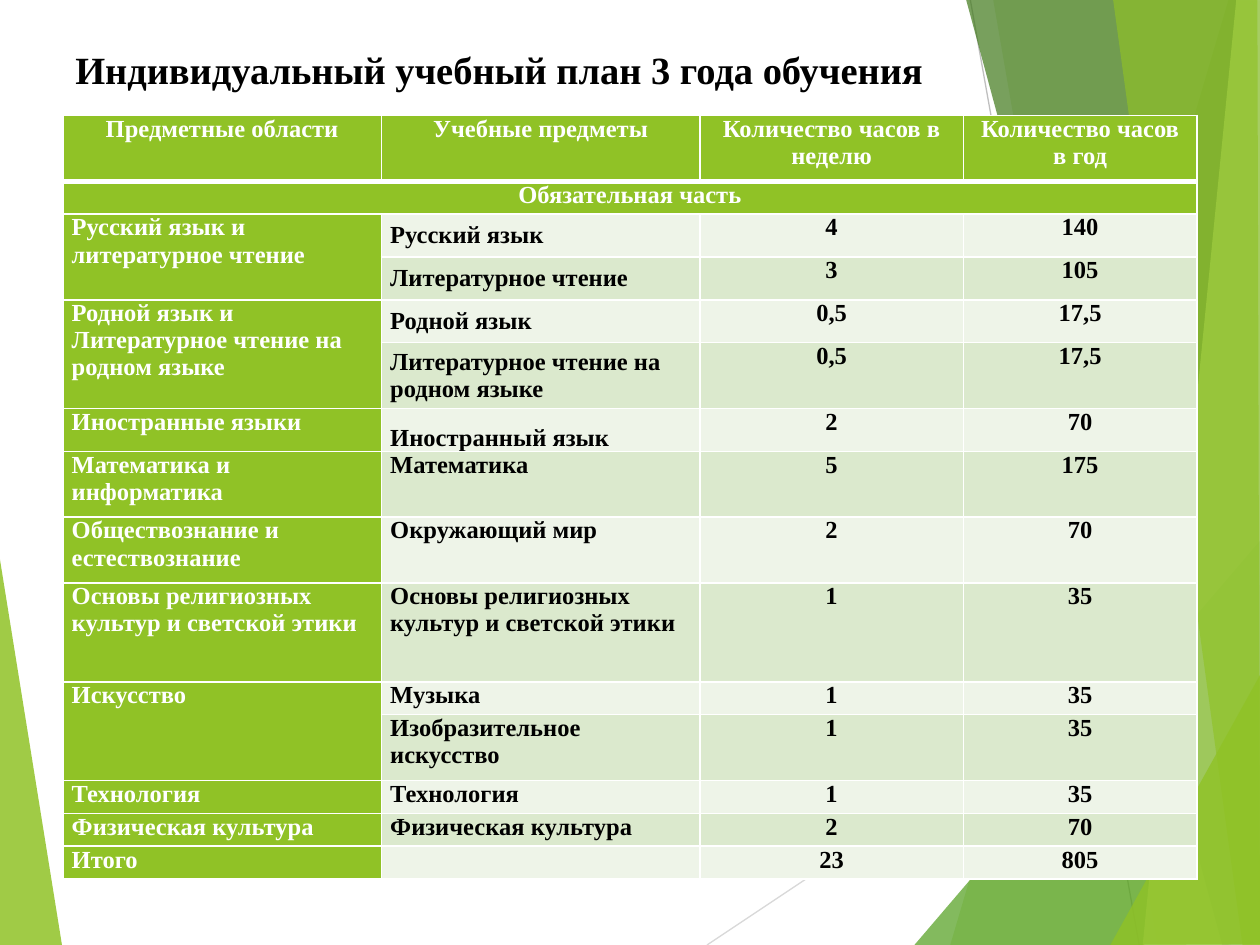
from lxml import etree
from pptx import Presentation
from pptx.dml.color import RGBColor
from pptx.enum.shapes import MSO_CONNECTOR
from pptx.enum.text import MSO_ANCHOR, PP_ALIGN
from pptx.oxml.ns import qn
from pptx.util import Pt

LEFT, CENTER = PP_ALIGN.LEFT, PP_ALIGN.CENTER
TOP, MIDDLE, BOTTOM = MSO_ANCHOR.TOP, MSO_ANCHOR.MIDDLE, MSO_ANCHOR.BOTTOM
STRAIGHT = MSO_CONNECTOR.STRAIGHT

FONT = "Times New Roman"
GREEN, WHITE, BLACK = "90C226", "FFFFFF", "000000"
BANDS = ("EEF4E8", "DBE9CD")

COLUMN_WIDTHS = (182, 182, 150.5, 133.5)
SHORT, MEDIUM, DOUBLE, TALL = 18.8, 24.5, 37.6, 56.5

HEADERS = ("Предметные области", "Учебные предметы",
           "Количество часов в неделю", "Количество часов в год")
SECTION = "Обязательная часть"
SUBJECTS = [
    ("Русский язык и литературное чтение", "Русский язык", "4", "140", MEDIUM, MIDDLE),
    (None, "Литературное чтение", "3", "105", MEDIUM, MIDDLE),
    ("Родной язык и Литературное чтение на родном языке", "Родной язык", "0,5", "17,5", MEDIUM, MIDDLE),
    (None, "Литературное чтение на родном языке", "0,5", "17,5", DOUBLE, MIDDLE),
    ("Иностранные языки", "Иностранный язык", "2", "70", MEDIUM, BOTTOM),
    ("Математика и информатика", "Математика", "5", "175", DOUBLE, TOP),
    ("Обществознание и естествознание", "Окружающий мир", "2", "70", DOUBLE, TOP),
    ("Основы религиозных культур и светской этики",
     "Основы религиозных культур и светской этики", "1", "35", TALL, TOP),
    ("Искусство", "Музыка", "1", "35", SHORT, TOP),
    (None, "Изобразительное искусство", "1", "35", DOUBLE, TOP),
    ("Технология", "Технология", "1", "35", SHORT, TOP),
    ("Физическая культура", "Физическая культура", "2", "70", SHORT, TOP),
    ("Итого", "", "23", "805", SHORT, TOP),
]

LEFT_FACET = (GREEN, 85, [(-0.6, 316), (35.5, 540.5), (-0.6, 540)])
RAYS = [("D9D9D9", (404, 540), (720.5, 329)), ("BFBFBF", (554.5, 0), (651, 540))]
RIGHT_FACETS = [
    (GREEN, 30, [(702, 0), (543, 540), (721, 540.5), (720.5, 0.5)]),
    (GREEN, 20, [(567.5, -0.5), (661.5, 540), (720.5, 540), (720.5, -0.5)]),
    ("54A021", 72, [(522.5, 540), (720, 309), (720.5, 540)]),
    ("3F7819", 70, [(552, -0.5), (698.5, 540), (720.5, 539.5), (720.5, -0.5)]),
    ("C0E474", 70, [(706.5, -0.5), (653, 540), (720.5, 540), (720, -0.5)]),
    (GREEN, 65, [(636, -0.5), (710, 540), (720, 540), (718.5, -0.5)]),
    (GREEN, 80, [(634.5, 540), (720.5, 385), (720.5, 539.5)]),
]


def color(value):
    return RGBColor.from_string(value)


def add_text(paragraph, text, size, ink):
    run = paragraph.add_run()
    run.text = text
    run.font.name = FONT
    run.font.size = Pt(size)
    run.font.bold = True
    run.font.color.rgb = color(ink)


def add_facet(slide, hue, opacity, corners):
    points = [(Pt(x), Pt(y)) for x, y in corners]
    builder = slide.shapes.build_freeform(*points[0], scale=1.0)
    builder.add_line_segments(points[1:], close=True)
    facet = builder.convert_to_shape()
    facet.shadow.inherit = False
    facet.fill.solid()
    facet.fill.fore_color.rgb = color(hue)
    facet.line.fill.background()
    tint = facet._element.spPr.find(qn("a:solidFill"))[0]
    etree.SubElement(tint, qn("a:alpha"), val=str(opacity * 1000))


def add_ray(slide, hue, start, end):
    ray = slide.shapes.add_connector(STRAIGHT, *(Pt(v) for v in start + end))
    ray.line.color.rgb = color(hue)
    ray.line.width = Pt(0.75)
    etree.SubElement(ray._element.spPr, qn("a:effectLst"))


def add_backdrop(slide):
    add_facet(slide, *LEFT_FACET)
    for ray in RAYS:
        add_ray(slide, *ray)
    for facet in RIGHT_FACETS:
        add_facet(slide, *facet)


def add_title(slide, left, top, width, height):
    heading = slide.shapes.add_textbox(Pt(left), Pt(top), Pt(width), Pt(height))
    frame = heading.text_frame
    frame.word_wrap = True
    frame.vertical_anchor = MIDDLE
    add_text(frame.paragraphs[0], "Индивидуальный учебный план 3 года обучения", 22, BLACK)


def add_borders(cell, top_width, bottom_width):
    properties = cell._tc.get_or_add_tcPr()
    sides = (("lnL", 1), ("lnR", 1), ("lnT", top_width), ("lnB", bottom_width))
    for side, width in sides:
        border = etree.SubElement(properties, qn("a:" + side), w=str(Pt(width)))
        fill = etree.SubElement(border, qn("a:solidFill"))
        etree.SubElement(fill, qn("a:srgbClr"), val=WHITE)


def fill_cell(cell, text, fill, ink, align, anchor=TOP, top_width=1, bottom_width=1):
    add_borders(cell, top_width, bottom_width)
    cell.fill.solid()
    cell.fill.fore_color.rgb = color(fill)
    cell.margin_left = cell.margin_right = Pt(5)
    cell.margin_top = cell.margin_bottom = Pt(0)
    cell.vertical_anchor = anchor
    paragraph = cell.text_frame.paragraphs[0]
    paragraph.alignment = align
    if text:
        add_text(paragraph, text, 14, ink)
    else:
        etree.SubElement(paragraph._p, qn("a:endParaRPr"), sz="1400")


def add_plan(slide, left, top, width, height):
    row_heights = [DOUBLE, SHORT] + [subject[4] for subject in SUBJECTS]
    plan = slide.shapes.add_table(len(row_heights), len(COLUMN_WIDTHS),
                                  Pt(left), Pt(top), Pt(width), Pt(height)).table
    plan.first_row = plan.horz_banding = False
    for column, column_width in zip(plan.columns, COLUMN_WIDTHS):
        column.width = Pt(column_width)
    for row, row_height in zip(plan.rows, row_heights):
        row.height = Pt(row_height)

    for column, header in enumerate(HEADERS):
        fill_cell(plan.cell(0, column), header, GREEN, WHITE, CENTER, bottom_width=3)
        fill_cell(plan.cell(1, column), "" if column else SECTION, GREEN, WHITE, CENTER, top_width=3)
    plan.cell(1, 0).merge(plan.cell(1, len(HEADERS) - 1))

    for row, (area, subject, weekly, yearly, _, anchor) in enumerate(SUBJECTS, start=2):
        band = BANDS[row % 2]
        fill_cell(plan.cell(row, 0), area, GREEN, WHITE, LEFT)
        fill_cell(plan.cell(row, 1), subject, band, BLACK, LEFT, anchor)
        fill_cell(plan.cell(row, 2), weekly, band, BLACK, CENTER)
        fill_cell(plan.cell(row, 3), yearly, band, BLACK, CENTER)
        if area is None:
            plan.cell(row - 1, 0).merge(plan.cell(row, 0))


def main():
    presentation = Presentation()
    presentation.slide_width, presentation.slide_height = Pt(720), Pt(540)
    slide = presentation.slides.add_slide(presentation.slide_layouts[6])
    add_backdrop(slide)
    add_title(slide, 36, 21.6, 648, 36)
    add_plan(slide, 36, 66, 648, 436.5)
    presentation.save("out.pptx")


if __name__ == "__main__":
    main()
